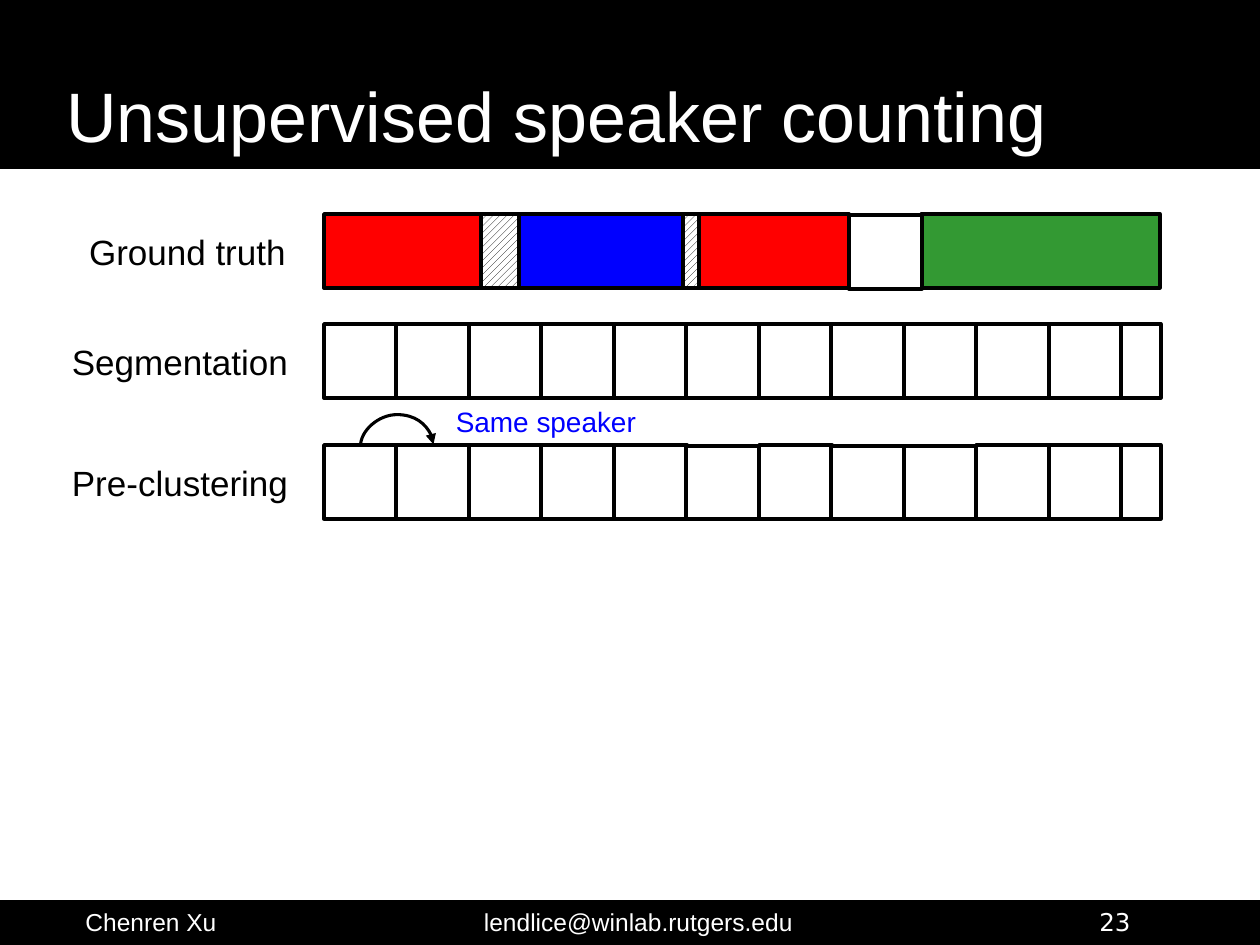
from dataclasses import dataclass

from lxml import etree
from pptx import Presentation, util as u
from pptx.dml.color import RGBColor
from pptx.enum import dml, shapes, text
from pptx.oxml.ns import qn

PX = u.Inches(1) // 126


@dataclass(frozen=True)
class Theme:
    black: str = "000000"
    white: str = "FFFFFF"
    red: str = "FF0000"
    blue: str = "0000FF"
    green: str = "339933"
    font: str = "Arial"
    number_font: str = "DejaVu Sans"
    title: int = 40
    label: int = 20
    note: int = 16
    footer: int = 14
    outline: float = 2
    arrow: float = 1.75


THEME = Theme()
HATCHED = "hatched"
BAR_LEFT, BAR_HEIGHT = 324, 74
TRUTH_TOP, SEGMENT_TOP, CLUSTER_TOP = 214, 324, 445
SEGMENTS, SEGMENT_WIDTH, LAST_WIDTH = 12, 73, 40


def emu(*lengths):
    return [length * PX for length in lengths]


def rgb(color):
    return RGBColor.from_string(color)


def add_box(parent, box, fill, outlined=True):
    rect = parent.add_shape(shapes.MSO_SHAPE.RECTANGLE, *emu(*box))
    rect.shadow.inherit = False
    if fill == HATCHED:
        rect.fill.patterned()
        rect.fill.pattern = dml.MSO_PATTERN.WIDE_UPWARD_DIAGONAL
        rect.fill.fore_color.rgb = rgb(THEME.black)
        rect.fill.back_color.rgb = rgb(THEME.white)
    else:
        rect.fill.solid()
        rect.fill.fore_color.rgb = rgb(fill)
    if outlined:
        rect.line.color.rgb = rgb(THEME.black)
        rect.line.width = u.Pt(THEME.outline)
    else:
        rect.line.fill.background()


def add_text(parent, box, words, size, color, align=text.PP_ALIGN.CENTER,
             anchor=text.MSO_ANCHOR.TOP, font=THEME.font):
    frame = parent.add_textbox(*emu(*box)).text_frame
    frame.word_wrap = True
    frame.vertical_anchor = anchor
    paragraph = frame.paragraphs[0]
    paragraph.alignment = align
    run = paragraph.add_run()
    run.text = words
    run.font.name = font
    run.font.size = u.Pt(size)
    run.font.color.rgb = rgb(color)


def add_segments(parent, top, lowered=()):
    """Row of equal segments with a short last one; lowered ones start 1 px down."""
    row = parent.add_group_shape().shapes
    for i in range(SEGMENTS):
        drop = 1 if i in lowered else 0
        width = LAST_WIDTH if i == SEGMENTS - 1 else SEGMENT_WIDTH
        left = BAR_LEFT + i * 145 // 2
        add_box(row, (left, top + drop, width, BAR_HEIGHT - drop), THEME.white)


def add_arc_arrow(parent, box, bulge):
    """Curved arrow turned a quarter; bulge is its height in box widths."""
    left, top, width, height = box
    arc = parent.add_connector(shapes.MSO_CONNECTOR.CURVE,
                               *emu(left, top, left + width, top + height))
    arc.line.color.rgb = rgb(THEME.black)
    arc.line.width = u.Pt(THEME.arrow)
    etree.SubElement(arc.line._get_or_add_ln(), qn("a:tailEnd"), type="triangle")
    properties = arc._element.spPr
    etree.SubElement(properties, qn("a:effectLst"))
    transform = properties.find(qn("a:xfrm"))
    for key, value in (("rot", "5400000"), ("flipH", "1"), ("flipV", "1")):
        transform.set(key, value)
    guides = properties.find(qn("a:prstGeom")).get_or_add_avLst()
    etree.SubElement(guides, qn("a:gd"), name="adj1", fmla=f"val {bulge * 100000}")


def add_frame(parent):
    """Title band, footer band and their texts."""
    add_box(parent, (0, 0, 1260, 169), THEME.black, outlined=False)
    add_box(parent, (-1, 900, 1261, 45), THEME.black, outlined=False)
    add_text(parent, (54, 58, 1152, 105), "Unsupervised speaker counting",
             THEME.title, THEME.white, text.PP_ALIGN.LEFT, text.MSO_ANCHOR.BOTTOM)
    for left, width, words in ((54, 194, "Chenren Xu"),
                               (425, 427, "lendlice@winlab.rutgers.edu")):
        add_text(parent, (left, 901, width, 38), words, THEME.footer, THEME.white)
    add_text(parent, (1087, 901, 121, 37), "23", THEME.footer, THEME.white,
             text.PP_ALIGN.LEFT, font=THEME.number_font)


def add_ground_truth(parent):
    turns = (
        (324, 195, THEME.red),
        (483, 232, THEME.blue),
        (683, 166, THEME.red),
        (921, 239, THEME.green),
        (481, 38, HATCHED),
        (683, 16, HATCHED),
    )
    for left, width, fill in turns:
        add_box(parent, (left, TRUTH_TOP, width, BAR_HEIGHT), fill)
    add_box(parent, (849, TRUTH_TOP + 1, SEGMENT_WIDTH, BAR_HEIGHT), THEME.white)


def main():
    deck = Presentation()
    deck.slide_width, deck.slide_height = emu(1260, 945)
    canvas = deck.slides.add_slide(deck.slide_layouts[6]).shapes

    add_frame(canvas)
    add_segments(canvas, CLUSTER_TOP, lowered=(5, 7, 8))
    add_arc_arrow(canvas, (396, 409, 2, 73), bulge=16)
    add_ground_truth(canvas)
    add_segments(canvas, SEGMENT_TOP)

    for left, top, width, words in ((64, TRUTH_TOP, 247, "Ground truth"),
                                    (49, SEGMENT_TOP, 262, "Segmentation"),
                                    (49, CLUSTER_TOP, 262, "Pre-clustering")):
        add_text(canvas, (left, top + 10, width, 55), words, THEME.label, THEME.black)
    add_text(canvas, (413, 398, 266, 47), "Same speaker", THEME.note, THEME.blue)

    deck.save("out.pptx")


if __name__ == "__main__":
    main()
